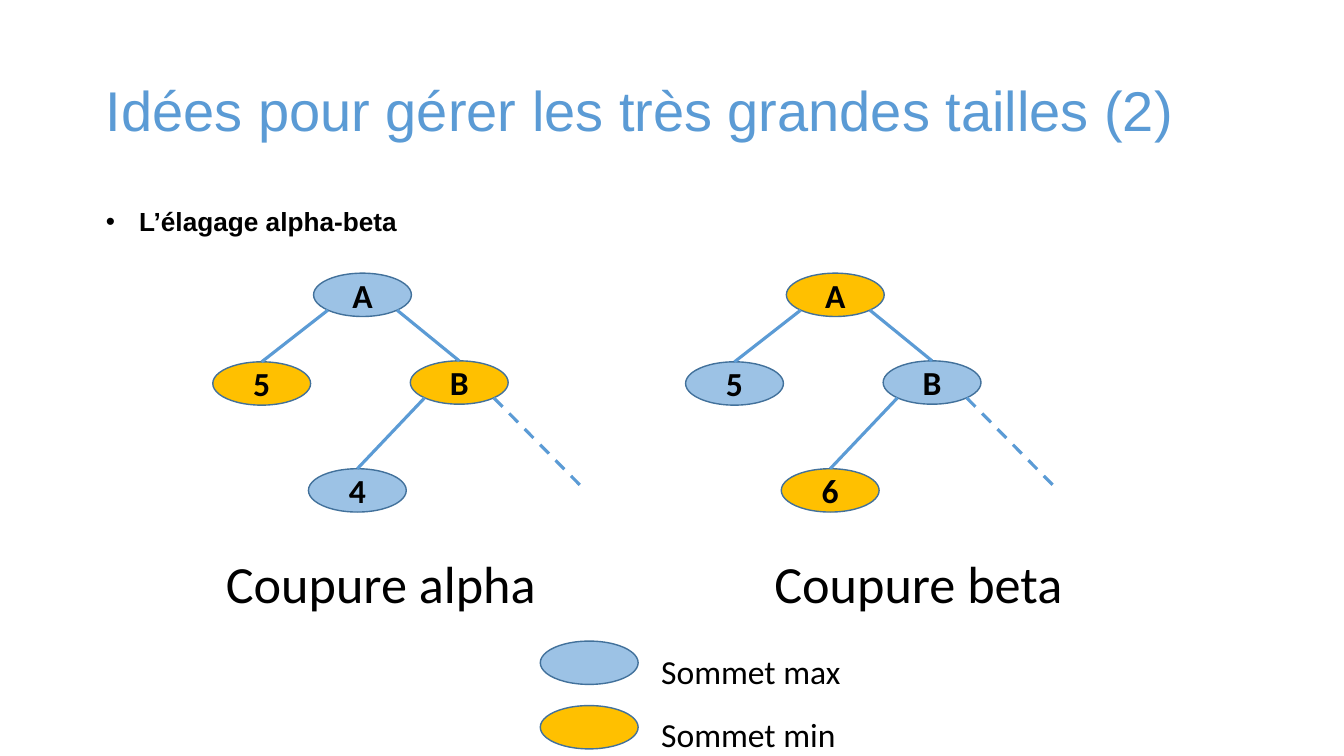
from dataclasses import dataclass
from math import sqrt

from lxml import etree
from pptx import Presentation
from pptx.dml.color import RGBColor
from pptx.enum.dml import MSO_LINE
from pptx.enum.shapes import MSO_CONNECTOR, MSO_SHAPE
from pptx.enum.text import MSO_ANCHOR, MSO_AUTO_SIZE, PP_ALIGN
from pptx.oxml.ns import qn
from pptx.shapes.autoshape import Shape
from pptx.shapes.connector import Connector
from pptx.slide import Slide
from pptx.text.text import TextFrame
from pptx.util import Inches, Pt

OVAL, STRAIGHT, DASH = MSO_SHAPE.OVAL, MSO_CONNECTOR.STRAIGHT, MSO_LINE.DASH
LEFT, CENTER = PP_ALIGN.LEFT, PP_ALIGN.CENTER
TOP, MIDDLE = MSO_ANCHOR.TOP, MSO_ANCHOR.MIDDLE

BLACK = RGBColor(0x00, 0x00, 0x00)
BLUE = RGBColor(0x5B, 0x9B, 0xD5)
OUTLINE = RGBColor(0x42, 0x71, 0x9B)
MAX_FILL = RGBColor(0x9C, 0xC2, 0xE5)
MIN_FILL = RGBColor(0xFF, 0xC0, 0x00)

# The slide is a grid of 100 columns by 100 rows
WIDTH, HEIGHT = Inches(13.33), Inches(7.5)
NODE_W, NODE_H = 7.28, 5.73
TREE_Y = 39
LOOSE_END = (16.54, 25.8)


@dataclass(frozen=True)
class Box:
    x: float
    y: float
    w: float
    h: float

    def emu(self) -> tuple[int, int, int, int]:
        return col(self.x), row(self.y), col(self.w), row(self.h)


@dataclass(frozen=True)
class Tree:
    x: float
    leaf: str
    own: RGBColor
    other: RGBColor
    caption: str
    caption_box: Box


@dataclass(frozen=True)
class LegendItem:
    label: str
    fill: RGBColor
    node_y: float
    text_y: float


TREES = [
    Tree(26.97, "4", MAX_FILL, MIN_FILL, "Coupure alpha", Box(15.83, 72, 25.4, 7.6)),
    Tree(62.15, "6", MIN_FILL, MAX_FILL, "Coupure beta", Box(56.64, 72, 23.7, 7.6)),
]
LEGEND = [
    LegendItem("Sommet max", MAX_FILL, 87.67, 85.2),
    LegendItem("Sommet min", MIN_FILL, 96.2, 93.47),
]


def col(n: float) -> int:
    return round(WIDTH * n / 100)


def row(n: float) -> int:
    return round(HEIGHT * n / 100)


def write(tf: TextFrame, text: str, size: float, font: str = "Calibri",
          color: RGBColor = BLACK, bold: bool = False,
          align: PP_ALIGN = LEFT, anchor: MSO_ANCHOR = TOP) -> None:
    tf.text = text
    tf.word_wrap = True
    tf.auto_size = MSO_AUTO_SIZE.NONE
    tf.vertical_anchor = anchor
    tf.margin_left = tf.margin_right = Inches(0.13)
    tf.margin_top = tf.margin_bottom = Inches(0.07)
    p = tf.paragraphs[0]
    p.alignment = align
    r = p.runs[0]
    r.font.name, r.font.size, r.font.bold = font, Pt(size), bold
    r.font.color.rgb = color


def add_text(s: Slide, box: Box, text: str, size: float,
             font: str = "Calibri", bold: bool = False) -> TextFrame:
    tf = s.shapes.add_textbox(*box.emu()).text_frame
    write(tf, text, size, font, bold=bold)
    return tf


def add_node(s: Slide, x: float, y: float, fill: RGBColor, label: str = "") -> Shape:
    """Draw an ellipse centred on a grid point."""
    box = Box(x - NODE_W / 2, y - NODE_H / 2, NODE_W, NODE_H)
    sp = s.shapes.add_shape(OVAL, *box.emu())
    sp.shadow.inherit = False
    sp.fill.solid()
    sp.fill.fore_color.rgb = fill
    sp.line.color.rgb = OUTLINE
    sp.line.width = Pt(1)
    if label:
        write(sp.text_frame, label, 24, bold=True, align=CENTER, anchor=MIDDLE)
    return sp


def add_branch(s: Slide, parent: Shape, side: int, x: int, y: int) -> Connector:
    """Leave the parent's lower left (-1) or lower right (1) at 45 degrees."""
    reach = 1 / sqrt(2)
    start_x = round(parent.left + parent.width / 2 * (1 + side * reach))
    start_y = round(parent.top + parent.height / 2 * (1 + reach))
    line = s.shapes.add_connector(STRAIGHT, start_x, start_y, x, y)
    line.line.color.rgb = BLUE
    line.line.width = Pt(2.25)
    etree.SubElement(line._element.spPr, qn("a:effectLst"))
    return line


def join(s: Slide, parent: Shape, side: int, child: Shape) -> None:
    line = add_branch(s, parent, side, child.left + child.width // 2, child.top)
    line.end_connect(child, 0)


def add_tree(s: Slide, tree: Tree) -> None:
    root = add_node(s, tree.x, TREE_Y, tree.own, "A")
    five = add_node(s, tree.x - 7.5, TREE_Y + 11.73, tree.other, "5")
    b = add_node(s, tree.x + 7.2, TREE_Y + 11.6, tree.other, "B")
    leaf = add_node(s, tree.x - 0.38, TREE_Y + 25.87, tree.own, tree.leaf)
    join(s, root, -1, five)
    join(s, root, 1, b)
    join(s, b, -1, leaf)
    dx, dy = LOOSE_END
    pruned = add_branch(s, b, 1, col(tree.x + dx), row(TREE_Y + dy))
    pruned.line.dash_style = DASH
    add_text(s, tree.caption_box, tree.caption, 37.3)


def add_bullet(tf: TextFrame) -> None:
    p = tf.paragraphs[0]
    pPr = p._p.get_or_add_pPr()
    pPr.set("marL", str(Inches(0.33)))
    pPr.set("indent", str(-Inches(0.33)))
    color = etree.SubElement(pPr, qn("a:buClr"))
    etree.SubElement(color, qn("a:srgbClr"), val=str(BLACK))
    etree.SubElement(pPr, qn("a:buFont"), typeface="Arial")
    etree.SubElement(pPr, qn("a:buChar"), char="•")
    p.line_spacing = 0.9


def main() -> None:
    prs = Presentation()
    prs.slide_width, prs.slide_height = WIDTH, HEIGHT
    s = prs.slides.add_slide(prs.slide_layouts[5])

    # Title and subject
    title = s.shapes.title
    title.left, title.top, title.width, title.height = Box(6.9, 5.33, 86.25, 19.33).emu()
    write(title.text_frame, "Idées pour gérer les très grandes tailles (2)", 40,
          "Arial", BLUE, anchor=MIDDLE)
    title.text_frame.paragraphs[0].line_spacing = 0.9
    subject = add_text(s, Box(6.9, 26.67, 86.25, 63.47), "L’élagage alpha-beta",
                       18.7, "Arial", bold=True)
    add_bullet(subject)

    # Pruned trees
    for tree in TREES:
        add_tree(s, tree)

    # Legend
    for item in LEGEND:
        add_node(s, 43.84, item.node_y, item.fill)
        add_text(s, Box(48.22, item.text_y, 15.5, 5.33), item.label, 24)

    prs.save("out.pptx")


if __name__ == "__main__":
    main()
